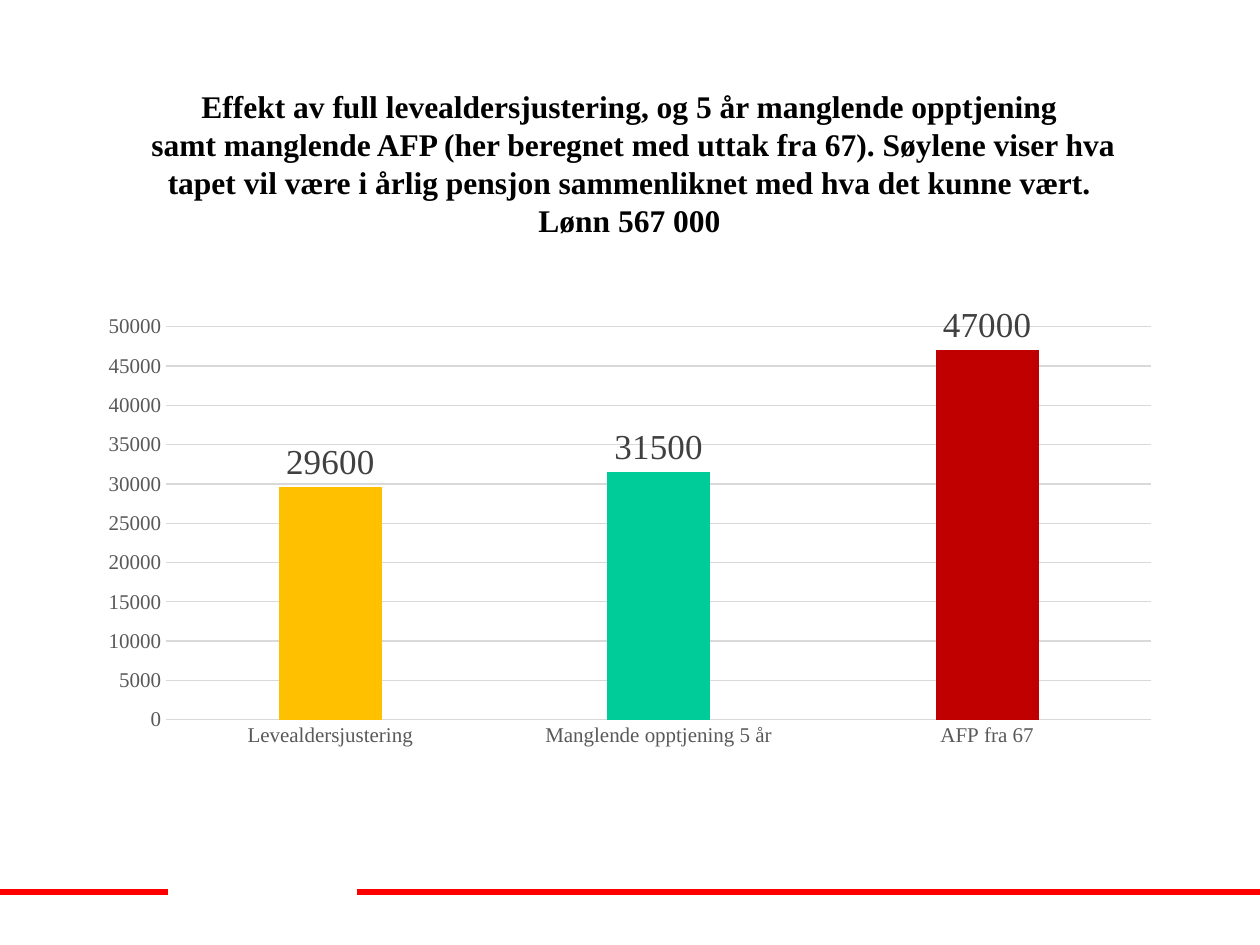
from pptx import Presentation
from pptx.chart.data import CategoryChartData
from pptx.dml.color import RGBColor
from pptx.enum.chart import XL_CHART_TYPE, XL_LABEL_POSITION, XL_TICK_MARK
from pptx.enum.shapes import MSO_CONNECTOR
from pptx.enum.text import MSO_ANCHOR, PP_ALIGN
from pptx.oxml.ns import qn
from pptx.util import Pt
from lxml.etree import SubElement

PX = 914400 / 126
FONT = "Times New Roman"


def px(*lengths):
    """Turn pixel lengths into EMU."""
    return [round(length * PX) for length in lengths]


def style_font(font, size, color, bold=False):
    font.name = FONT
    font.size = Pt(size)
    font.bold = bold
    font.color.rgb = RGBColor.from_string(color)


deck = Presentation()
deck.slide_width, deck.slide_height = px(1260, 945)
page = deck.slides.add_slide(deck.slide_layouts[6])

# Footer rule with a gap
for start, end in [(0, 168), (357, 1260)]:
    rule = page.shapes.add_connector(MSO_CONNECTOR.STRAIGHT, *px(start, 892, end, 892))
    rule.line.color.rgb = RGBColor.from_string("FF0000")
    rule.line.width = Pt(3)
    SubElement(rule._element.spPr, qn("a:effectLst"))

# Title
title = page.shapes.add_textbox(*px(94, 84, 1071, 158))
frame = title.text_frame
frame.word_wrap = True
frame.vertical_anchor = MSO_ANCHOR.MIDDLE
para = frame.paragraphs[0]
para.text = (
    "Effekt av full levealdersjustering, og 5 år manglende opptjening\v"
    " samt manglende AFP (her beregnet med uttak fra 67). Søylene viser hva "
    "tapet vil være i årlig pensjon sammenliknet med hva det kunne vært.\v"
    "Lønn 567 000"
)
para.alignment = PP_ALIGN.CENTER
for span in para.runs:
    style_font(span.font, 18, "000000", bold=True)

# Yearly pension loss
losses = [
    ("Levealdersjustering", 29600, "FFC000"),
    ("Manglende opptjening 5 år", 31500, "00CC99"),
    ("AFP fra 67", 47000, "C00000"),
]
data = CategoryChartData()
data.categories = [name for name, _, _ in losses]
data.add_series("Series 1", [loss for _, loss, _ in losses])
chart = page.shapes.add_chart(
    XL_CHART_TYPE.COLUMN_CLUSTERED, *px(87, 306, 1086, 450), data
).chart
chart.has_title = False
chart.has_legend = False
style_font(chart.font, 10, "000000")

plot = chart.plots[0]
plot.gap_width = 219
plot.overlap = -27
plot.vary_by_categories = False
series = plot.series[0]
series.format.fill.solid()
series.format.fill.fore_color.rgb = RGBColor.from_string("00CC99")
for index, (_, _, color) in enumerate(losses):
    fill = series.points[index].format.fill
    fill.solid()
    fill.fore_color.rgb = RGBColor.from_string(color)

labels = series.data_labels
labels.show_value = True
labels.position = XL_LABEL_POSITION.OUTSIDE_END
style_font(labels.font, 20, "404040")

for axis in (chart.category_axis, chart.value_axis):
    axis.major_tick_mark = XL_TICK_MARK.NONE
    axis.minor_tick_mark = XL_TICK_MARK.NONE
    style_font(axis.tick_labels.font, 12, "595959")

value_axis = chart.value_axis
value_axis.minimum_scale = 0
value_axis.maximum_scale = 50000
value_axis.major_unit = 5000
value_axis.has_major_gridlines = True
value_axis.format.line.fill.background()
for line in (chart.category_axis.format.line, value_axis.major_gridlines.format.line):
    line.color.rgb = RGBColor.from_string("D9D9D9")
    line.width = Pt(0.75)

deck.save("out.pptx")
